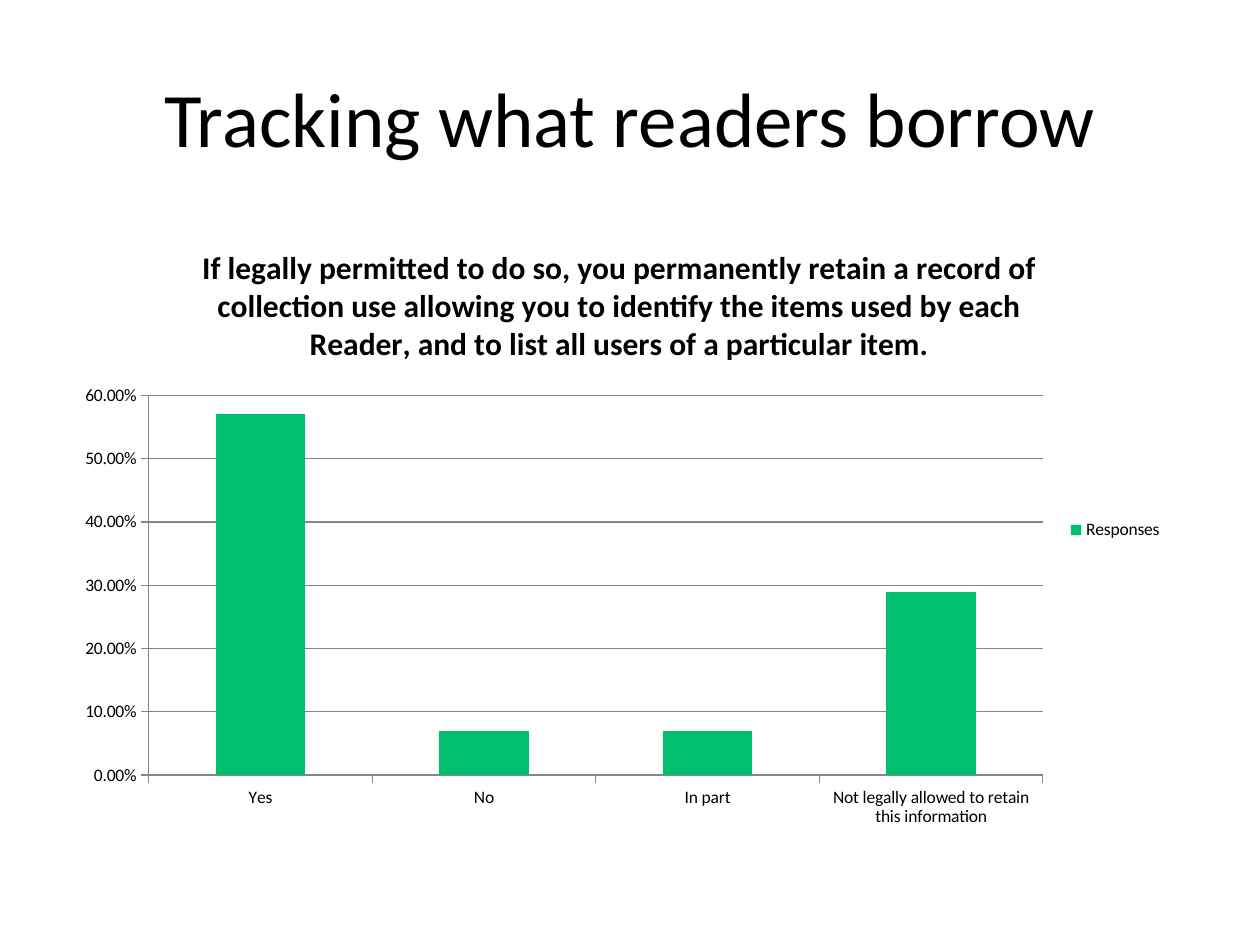
from pptx import Presentation
from pptx.chart.data import CategoryChartData
from pptx.dml.color import RGBColor
from pptx.enum.chart import XL_CHART_TYPE, XL_LEGEND_POSITION, XL_TICK_MARK
from pptx.enum.text import MSO_ANCHOR, PP_ALIGN
from pptx.util import Cm, Pt

COLUMNS = XL_CHART_TYPE.COLUMN_CLUSTERED
LEGEND_RIGHT = XL_LEGEND_POSITION.RIGHT
TICK_OUTSIDE = XL_TICK_MARK.OUTSIDE

TITLE = "Tracking what readers borrow"
QUESTION = (
    "If legally permitted to do so, you permanently retain a record of "
    "collection use allowing you to identify the items used by each Reader, "
    "and to list all users of a particular item."
)
RESPONSES = {
    "Yes": 0.57,
    "No": 0.07,
    "In part": 0.07,
    "Not legally allowed to retain this information": 0.29,
}
FONT = "Calibri"
COLORS = {"text": "000000", "bar": "00BF6F", "line": "868686"}


def color(name):
    return RGBColor.from_string(COLORS[name])


def set_font(font, size, bold=False):
    font.name = FONT
    font.size = Pt(size)
    font.bold = bold
    font.color.rgb = color("text")


def style_line(line):
    line.color.rgb = color("line")
    line.width = Pt(0.75)


def add_title(page):
    title = page.shapes.title
    title.left, title.top = Cm(1.27), Cm(0.76)
    title.width, title.height = Cm(22.86), Cm(3.18)
    frame = title.text_frame
    frame.text = TITLE
    frame.vertical_anchor = MSO_ANCHOR.MIDDLE
    para = frame.paragraphs[0]
    para.alignment = PP_ALIGN.CENTER
    set_font(para.font, 44)


def add_response_chart(page):
    data = CategoryChartData(number_format="0.00%")
    data.categories = list(RESPONSES)
    data.add_series("Responses", list(RESPONSES.values()))
    chart = page.shapes.add_chart(
        COLUMNS, Cm(1.27), Cm(4.45), Cm(22.43), Cm(12.47), data
    ).chart
    set_font(chart.font, 10)

    heading = chart.chart_title.text_frame
    heading.text = QUESTION
    set_font(heading.paragraphs[0].font, 18, bold=True)
    chart.chart_title.include_in_layout = False

    chart.has_legend = True
    chart.legend.position = LEGEND_RIGHT
    chart.legend.include_in_layout = False

    for axis in (chart.category_axis, chart.value_axis):
        axis.major_tick_mark = TICK_OUTSIDE
        style_line(axis.format.line)
    values = chart.value_axis
    values.minimum_scale, values.maximum_scale = 0, 0.6
    values.major_unit = 0.1
    values.has_major_gridlines = True
    style_line(values.major_gridlines.format.line)
    values.tick_labels.number_format = "0.00%"
    values.tick_labels.number_format_is_linked = False

    plot = chart.plots[0]
    plot.gap_width = 150
    plot.vary_by_categories = False
    fill = plot.series[0].format.fill
    fill.solid()
    fill.fore_color.rgb = color("bar")


def main():
    deck = Presentation()
    deck.slide_width, deck.slide_height = Cm(25.4), Cm(19.05)
    page = deck.slides.add_slide(deck.slide_layouts.get_by_name("Title Only"))
    add_title(page)
    add_response_chart(page)
    deck.save("out.pptx")


if __name__ == "__main__":
    main()
